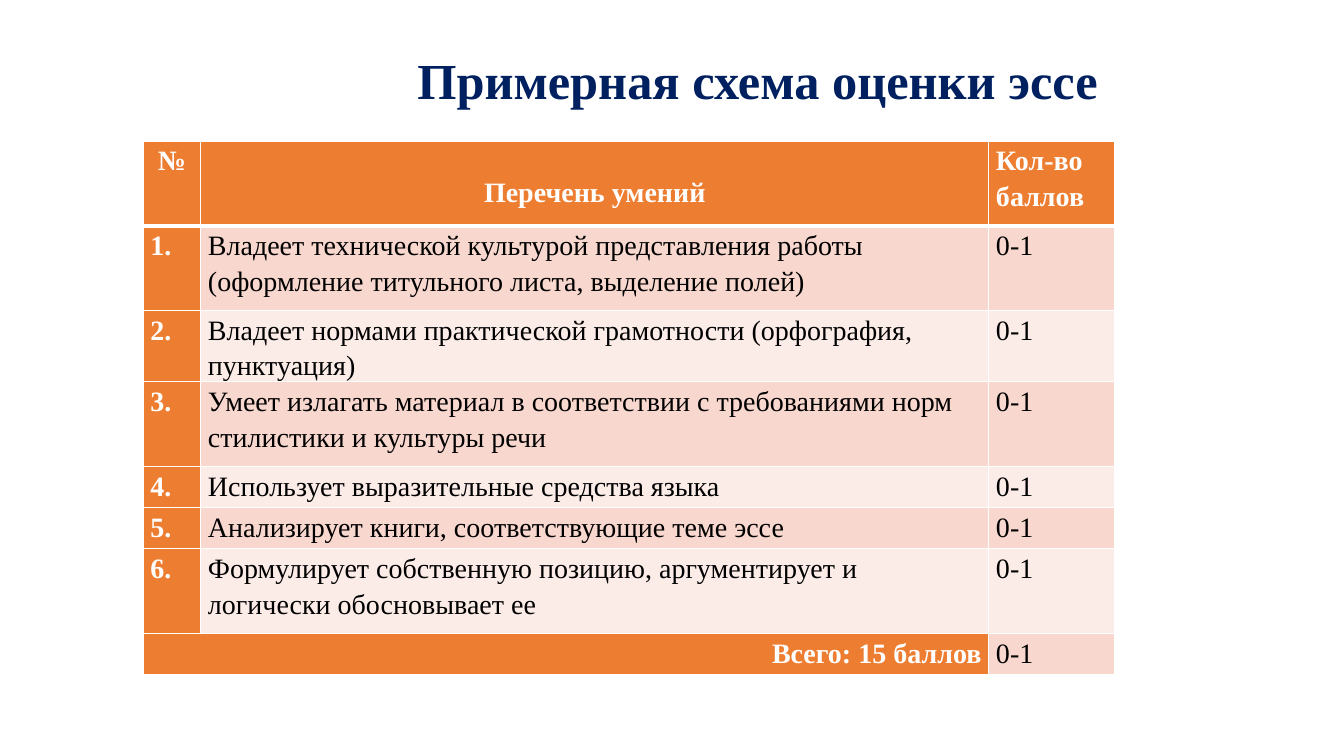
from dataclasses import dataclass

from lxml.etree import SubElement
from pptx import Presentation
from pptx.dml.color import RGBColor
from pptx.enum.text import MSO_ANCHOR, PP_ALIGN
from pptx.oxml.ns import qn
from pptx.util import Cm, Pt


@dataclass(frozen=True)
class Theme:
    font: str = "Times New Roman"
    title_size: int = 36
    table_size: int = 20
    title: str = "002060"
    accent: str = "ED7D31"
    bands: tuple = ("F8D7CE", "FCECE8")
    light: str = "FFFFFF"
    dark: str = "000000"


THEME = Theme()
TITLE = "Примерная схема оценки эссе"
HEADER = ("№", "Перечень умений", "Кол-во\nбаллов")
SKILLS = (
    "Владеет технической культурой представления работы (оформление титульного листа, выделение полей)",
    "Владеет нормами практической грамотности (орфография, пунктуация)",
    "Умеет излагать материал в соответствии с требованиями норм стилистики и культуры речи",
    "Использует выразительные средства языка",
    "Анализирует книги, соответствующие теме эссе",
    "Формулирует собственную позицию, аргументирует и логически обосновывает ее",
)
SCORE = "0-1"
TOTAL = "Всего: 15 баллов"
COL_WIDTHS = (1.45, 19.86, 3.18)
ROW_HEIGHTS = (2.13, 2.13, 1.8, 2.13, 1.04, 1.04, 2.13, 1.04)


def format_text(tf, size, color, bold, align, spacing):
    for p in tf.paragraphs:
        p.alignment = align
        p.line_spacing = spacing
        for r in p.runs:
            r.font.name = THEME.font
            r.font.size = Pt(size)
            r.font.bold = bold
            r.font.color.rgb = RGBColor.from_string(color)


def add_title(s):
    sp = s.shapes.title
    sp.left, sp.top, sp.width, sp.height = Cm(6.65), Cm(1.02), Cm(24.89), Cm(2.16)
    tf = sp.text_frame
    tf.text = TITLE
    tf.vertical_anchor = MSO_ANCHOR.MIDDLE
    format_text(tf, THEME.title_size, THEME.title, True, PP_ALIGN.CENTER, 0.9)


def set_borders(cell, top, bottom):
    tcPr = cell._tc.get_or_add_tcPr()
    for side, width in (("L", 1), ("R", 1), ("T", top), ("B", bottom)):
        ln = SubElement(tcPr, qn(f"a:ln{side}"), w=str(Pt(width)))
        fill = SubElement(ln, qn("a:solidFill"))
        SubElement(fill, qn("a:srgbClr"), val=THEME.light)


def style_cell(cell, row, accent, align):
    set_borders(cell, 3 if row == 1 else 1, 3 if row == 0 else 1)
    color = THEME.accent if accent else THEME.bands[(row - 1) % 2]
    cell.fill.solid()
    cell.fill.fore_color.rgb = RGBColor.from_string(color)
    cell.margin_left = cell.margin_right = Cm(0.18)
    cell.margin_top = cell.margin_bottom = 0
    text_color = THEME.light if accent else THEME.dark
    format_text(cell.text_frame, THEME.table_size, text_color, accent, align, 1.15)


def add_score_table(s):
    rows = [HEADER]
    rows += [(f"{n}.", skill, SCORE) for n, skill in enumerate(SKILLS, 1)]
    rows.append((TOTAL, "", SCORE))
    last = len(rows) - 1
    frame = s.shapes.add_table(len(rows), len(HEADER), Cm(3.61), Cm(3.56),
                               Cm(sum(COL_WIDTHS)), Cm(sum(ROW_HEIGHTS)))
    table = frame.table
    for column, width in zip(table.columns, COL_WIDTHS):
        column.width = Cm(width)
    for table_row, height in zip(table.rows, ROW_HEIGHTS):
        table_row.height = Cm(height)
    table.first_col = True
    table.last_row = False
    table.cell(last, 0).merge(table.cell(last, 1))
    for i, texts in enumerate(rows):
        for j, text in enumerate(texts):
            cell = table.cell(i, j)
            if text:
                cell.text_frame.text = text
            align = PP_ALIGN.LEFT
            if i == 0 and j < 2:
                align = PP_ALIGN.CENTER
            elif i == last and j == 0:
                align = PP_ALIGN.RIGHT
            accent = i == 0 or j == 0 or cell.is_spanned
            style_cell(cell, i, accent, align)
    table.cell(0, 1).margin_top = Cm(0.79)


def main():
    prs = Presentation()
    prs.slide_width, prs.slide_height = Cm(33.87), Cm(19.05)
    s = prs.slides.add_slide(prs.slide_layouts.get_by_name("Title Only"))
    add_title(s)
    add_score_table(s)
    prs.save("out.pptx")


if __name__ == "__main__":
    main()
